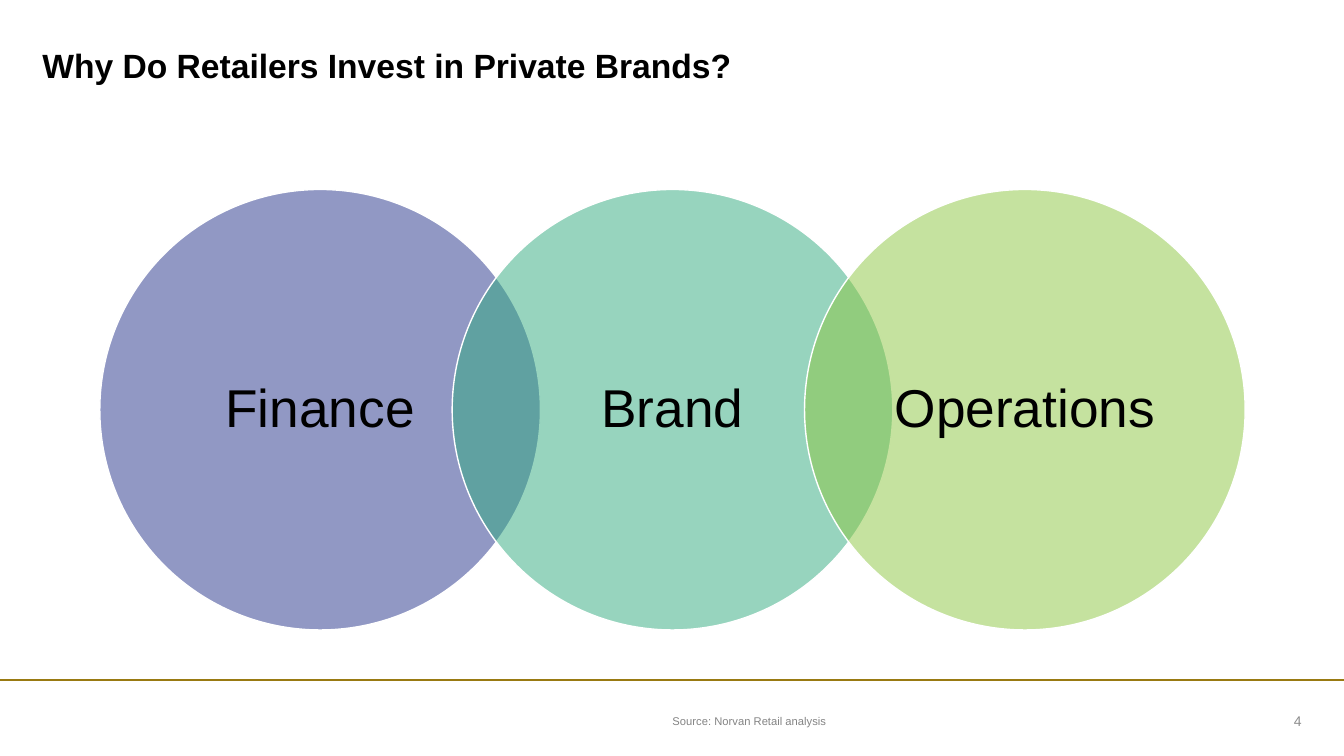
from lxml import etree
from pptx import Presentation
from pptx.dml.color import RGBColor
from pptx.enum.shapes import MSO_CONNECTOR, MSO_SHAPE
from pptx.enum.text import MSO_ANCHOR, PP_ALIGN
from pptx.oxml.ns import qn
from pptx.util import Inches, Pt

LEFT, CENTER, RIGHT = PP_ALIGN.LEFT, PP_ALIGN.CENTER, PP_ALIGN.RIGHT
MIDDLE = MSO_ANCHOR.MIDDLE
OVAL = MSO_SHAPE.OVAL
STRAIGHT = MSO_CONNECTOR.STRAIGHT


def color(hex_string):
    return RGBColor.from_string(hex_string)


def add_text(text, left, top, width, height, size, hex_string, align=LEFT, bold=False, inset=(0, 0)):
    box = slide.shapes.add_textbox(Inches(left), Inches(top), Inches(width), Inches(height))
    frame = box.text_frame
    frame.word_wrap = True
    frame.vertical_anchor = MIDDLE
    frame.margin_left = frame.margin_right = Inches(inset[0])
    frame.margin_top = frame.margin_bottom = Inches(inset[1])
    frame.text = text
    paragraph = frame.paragraphs[0]
    paragraph.alignment = align
    font = paragraph.runs[0].font
    font.name = "Arial"
    font.size = Pt(size)
    font.bold = bold
    font.color.rgb = color(hex_string)
    return paragraph


presentation = Presentation()
presentation.slide_width = Inches(13.33)
presentation.slide_height = Inches(7.5)
slide = presentation.slides.add_slide(presentation.slide_layouts[6])

# Footer rule
rule = slide.shapes.add_connector(STRAIGHT, Inches(0), Inches(6.75), Inches(13.33), Inches(6.75))
rule.line.color.rgb = color("997A12")
rule.line.width = Pt(1.5)
etree.SubElement(rule._element.spPr, qn("a:effectLst"))

# Title
add_text("Why Do Retailers Invest in Private Brands?", 0.42, 0.43, 12.5, 0.44, 24, "000000", bold=True)

# Overlapping circles with their labels
DIAMETER, LABEL_SIZE = 4.37, 3.09
FIRST_LEFT, CIRCLE_TOP, STEP = 0.99, 1.88, 3.495
LABEL_OFFSET = (DIAMETER - LABEL_SIZE) / 2
reasons = [("Finance", "24338A"), ("Brand", "30AA7F"), ("Operations", "8CC640")]
for index, (reason, fill) in enumerate(reasons):
    left = FIRST_LEFT + index * STEP
    circle = slide.shapes.add_shape(
        OVAL, Inches(left), Inches(CIRCLE_TOP), Inches(DIAMETER), Inches(DIAMETER))
    circle.shadow.inherit = False
    circle.fill.solid()
    circle.fill.fore_color.rgb = color(fill)
    fill_color = circle._element.spPr.find(qn("a:solidFill"))[0]
    etree.SubElement(fill_color, qn("a:alpha"), val="50000")
    circle.line.color.rgb = color("FFFFFF")
    circle.line.width = Pt(1)
    label = add_text(reason, left + LABEL_OFFSET, CIRCLE_TOP + LABEL_OFFSET, LABEL_SIZE, LABEL_SIZE,
                     38, "000000", align=CENTER, inset=(0.24, 0.05))
    label.line_spacing = 0.9

# Source and slide number
add_text("Source: Norvan Retail analysis", 6.67, 7.05, 5.1, 0.2, 8, "848484")
add_text("4", 11.88, 7.05, 1.03, 0.2, 10, "8C8C8C", align=RIGHT)

presentation.save("out.pptx")
